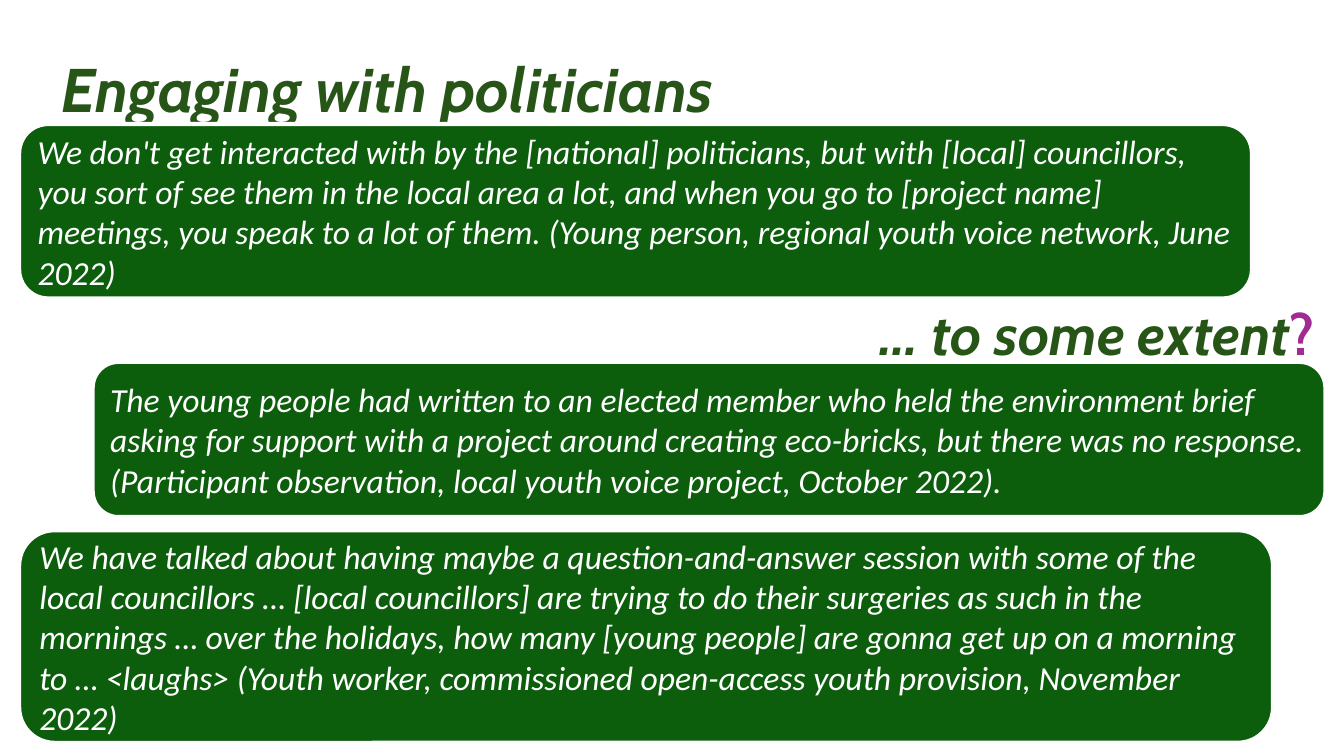
import pptx
import pptx.dml.color
import pptx.enum.shapes
import pptx.enum.text
import pptx.util

Pt = pptx.util.Pt
ALIGN = pptx.enum.text.PP_ALIGN
MIDDLE = pptx.enum.text.MSO_ANCHOR.MIDDLE

WHITE = "FFFFFF"
PANEL_GREEN = "0C5E0C"
HEADING_GREEN = "275417"
PURPLE = "A02B93"

# Left, top, width, height and wording of each quote
QUOTES = [
    (13.7, 88.6, 880.6, 124.6,
     "We don't get interacted with by the [national] politicians, but with "
     "[local] councillors, you sort of see them in the local area a lot, and "
     "when you go to [project name] meetings, you speak to a lot of them. "
     "(Young person, regional youth voice network, June 2022)"),
    (66.2, 258.5, 880.6, 110.9,
     "The young people had written to an elected member who held the "
     "environment brief asking for support with a project around creating "
     "eco-bricks, but there was no response. (Participant observation, local "
     "youth voice project, October 2022)."),
    (13.7, 378.7, 895.7, 151.9,
     "We have talked about having maybe a question-and-answer session with "
     "some of the local councillors … [local councillors] are trying to do "
     "their surgeries as such in the mornings … over the holidays, how many "
     "[young people] are gonna get up on a morning to … <laughs> (Youth "
     "worker, commissioned open-access youth provision, November 2022)"),
]


def rgb(value):
    return pptx.dml.color.RGBColor.from_string(value)


def format_run(r, font, size, color, bold=False, italic=True):
    r.font.name = font
    r.font.size = Pt(size)
    r.font.color.rgb = rgb(color)
    r.font.bold = bold
    r.font.italic = italic


def add_heading(s, left, top, width, height, text, size, spacing,
                align=ALIGN.LEFT):
    sp = s.shapes.add_textbox(Pt(left), Pt(top), Pt(width), Pt(height))
    tf = sp.text_frame
    tf.word_wrap = True
    tf.vertical_anchor = MIDDLE
    tf.text = text
    p = tf.paragraphs[0]
    p.alignment = align
    p.line_spacing = spacing
    format_run(p.runs[0], "Cabin", size, HEADING_GREEN, bold=True)
    return p


def add_quote(s, left, top, width, height, text):
    sp = s.shapes.add_shape(
        pptx.enum.shapes.MSO_SHAPE.ROUNDED_RECTANGLE,
        Pt(left), Pt(top), Pt(width), Pt(height))
    sp.shadow.inherit = False
    sp.fill.solid()
    sp.fill.fore_color.rgb = rgb(PANEL_GREEN)
    sp.line.color.rgb = rgb(WHITE)
    sp.line.width = Pt(3)
    tf = sp.text_frame
    tf.word_wrap = True
    tf.vertical_anchor = MIDDLE
    tf.text = text
    p = tf.paragraphs[0]
    p.alignment = ALIGN.LEFT
    format_run(p.runs[0], "Calibri", 24, WHITE)


def main():
    prs = pptx.Presentation()
    prs.slide_width, prs.slide_height = Pt(960), Pt(540)
    s = prs.slides.add_slide(prs.slide_layouts[6])

    # Title, partly overlapped by the first quote
    add_heading(s, 36.7, 28.8, 856.8, 74.2, "Engaging with politicians", 44, 0.9)
    add_quote(s, *QUOTES[0])

    # Second heading with its contrasting question mark
    p = add_heading(s, 557.3, 220.3, 388.8, 46.8, "… to some extent", 40.7, 0.7,
                    ALIGN.RIGHT)
    r = p.add_run()
    r.text = "?"
    format_run(r, "Cabin", 40.7, PURPLE, bold=True, italic=False)

    # Remaining quotes
    for quote in QUOTES[1:]:
        add_quote(s, *quote)

    prs.save("out.pptx")


if __name__ == "__main__":
    main()
